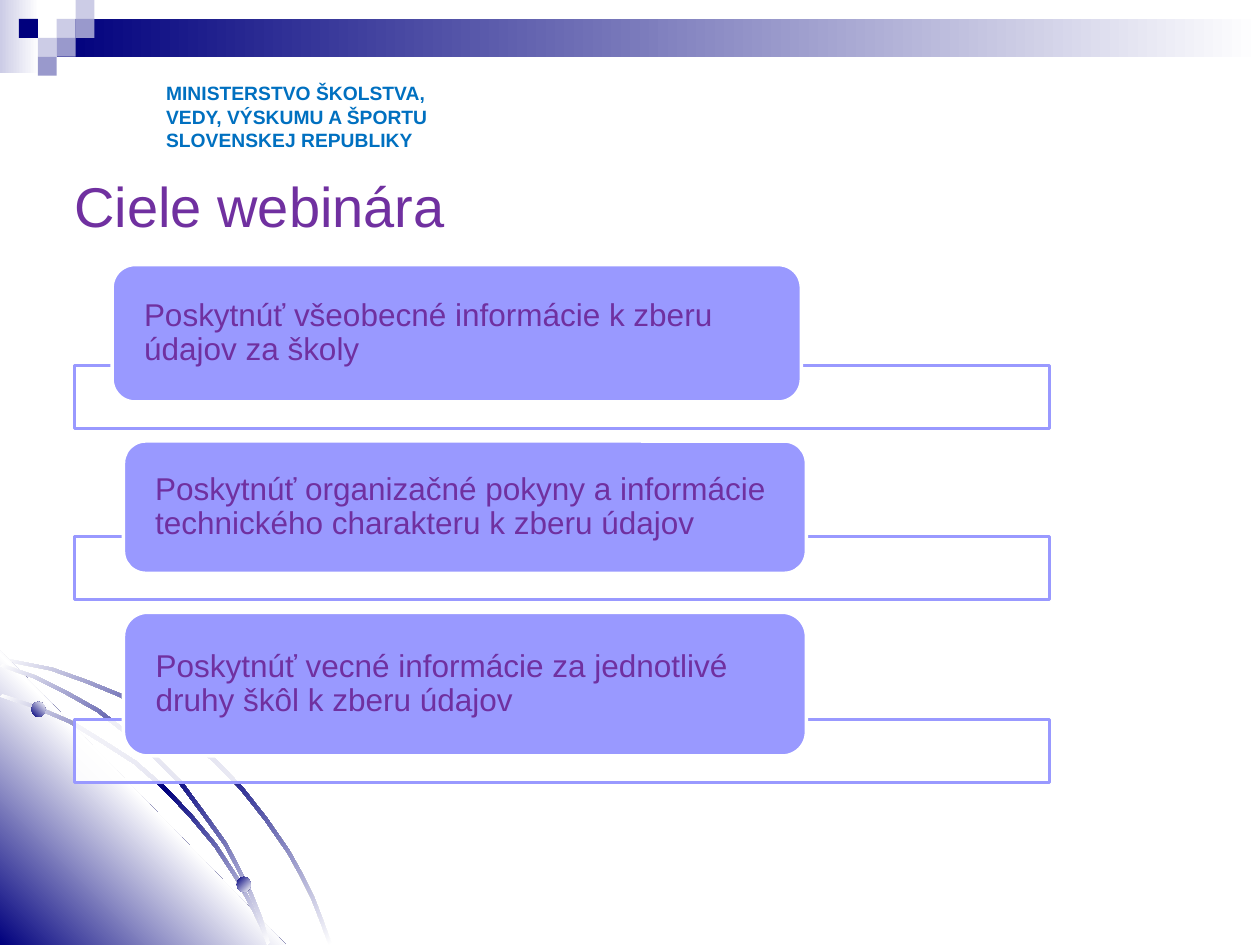
from lxml.etree import SubElement
from pptx import Presentation
from pptx.dml.color import RGBColor
from pptx.enum.shapes import MSO_SHAPE
from pptx.enum.text import MSO_ANCHOR, MSO_AUTO_SIZE, PP_ALIGN
from pptx.oxml.ns import qn
from pptx.util import Inches, Pt

COLORS = {
    "navy": "00007D",
    "slate": "9999CC",
    "pale": "CCCCE6",
    "white": "FFFFFF",
    "card": "9999FF",
    "purple": "7030A0",
    "blue": "0070C0",
}
FONT = "Arial"
UNIT = Inches(0.1)  # the slide is a grid of 100 columns and 75 rows
SQUARE = 1.5
SQUARES = [  # column, row, colour
    (3, 1, "pale"), (4, 0, "pale"), (4, 1, "slate"), (2, 2, "pale"),
    (1, 1, "navy"), (3, 2, "slate"), (2, 3, "slate"),
]
# Lower edges of the arcs, in hundredths of an inch
OUTER_ARC = [
    (0, 524), (20, 528), (40, 532), (68, 542), (95, 553), (122, 569), (147, 586),
    (170, 605), (191, 627), (210, 651), (228, 677), (238, 695), (247, 713),
    (254, 731), (261, 750),
]
LOWER_ARC = [
    (0, 553), (27, 562), (55, 574), (81, 590), (106, 606), (129, 626), (150, 648),
    (170, 672), (187, 698), (201, 724), (207, 737), (212, 750),
]
MIDDLE_ARC = [
    (0, 529), (26, 538), (52, 551), (77, 565), (100, 583), (122, 602), (143, 623),
    (160, 646), (178, 671), (188, 690), (198, 710), (206, 730), (212, 750),
]
CORNER = [(227, 750), (0, 750), (0, 516)]
ARC_THICKNESS = 2
MINISTRY = "MINISTERSTVO ŠKOLSTVA,\nVEDY, VÝSKUMU A ŠPORTU\nSLOVENSKEJ REPUBLIKY"
GOALS = [  # left, width and height of the card, text
    (8.9, 54.7, 10.9, "Poskytnúť všeobecné informácie k zberu údajov za školy"),
    (9.8, 54.2, 10.5, "Poskytnúť organizačné pokyny a informácie technického charakteru k zberu údajov"),
    (9.8, 54.2, 11.4, "Poskytnúť vecné informácie za jednotlivé druhy škôl k zberu údajov"),
]
BAR_LEFT, BAR_WIDTH, BAR_HEIGHT = 5.9, 77.4, 5
FIRST_CARD_TOP, BAR_OVERLAP, GOAL_GAP = 21, 2.9, 1


def rgb(name):
    return RGBColor.from_string(COLORS[name])


def grid(*cells):
    return [round(cell * UNIT) for cell in cells]


def fill_solid(shape, color):
    shape.fill.solid()
    shape.fill.fore_color.rgb = rgb(color)


def fill_gradient(shape, colors, angle):
    """Spread the colours evenly, with the angle in degrees clockwise."""
    shape.fill.gradient()
    gradient = shape.fill._fill._gradFill
    for child in list(gradient):
        gradient.remove(child)
    stops = SubElement(gradient, qn("a:gsLst"))
    for index, color in enumerate(colors):
        position = 100000 * index // (len(colors) - 1)
        stop = SubElement(stops, qn("a:gs"), pos=str(position))
        SubElement(stop, qn("a:srgbClr"), val=COLORS[color])
    SubElement(gradient, qn("a:lin"), ang=str(angle * 60000), scaled="0")


def add_plain_shape(slide, kind, left, top, width, height):
    shape = slide.shapes.add_shape(kind, *grid(left, top, width, height))
    shape.shadow.inherit = False
    shape.line.fill.background()
    return shape


def add_freeform(slide, points, colors, angle):
    builder = slide.shapes.build_freeform(*points[0], scale=Inches(0.01))
    builder.add_line_segments(points[1:], close=True)
    shape = builder.convert_to_shape()
    shape.shadow.inherit = False
    shape.line.fill.background()
    fill_gradient(shape, colors, angle)


def add_arc(slide, edge):
    upper_edge = [(x + ARC_THICKNESS, y - ARC_THICKNESS) for x, y in reversed(edge)]
    add_freeform(slide, edge + upper_edge, ["white", "navy", "white"], 45)


def add_header(slide):
    fade = add_plain_shape(slide, MSO_SHAPE.RECTANGLE, 0, 0, 3.1, 5.8)
    fill_gradient(fade, ["pale", "white"], 0)
    band = add_plain_shape(slide, MSO_SHAPE.RECTANGLE, 4.5, 1.5, 95.5, 3)
    fill_gradient(band, ["navy", "white"], 0)
    for column, row, color in SQUARES:
        square = add_plain_shape(
            slide, MSO_SHAPE.RECTANGLE, column * SQUARE, row * SQUARE, SQUARE, SQUARE)
        fill_solid(square, color)


def add_corner(slide):
    add_arc(slide, OUTER_ARC)
    add_freeform(slide, CORNER, ["navy", "white", "navy"], 315)
    add_arc(slide, LOWER_ARC)
    add_arc(slide, MIDDLE_ARC)
    for left, top, angle in [(2.5, 55.7, 315), (18.8, 69.6, 45)]:
        dot = add_plain_shape(slide, MSO_SHAPE.OVAL, left, top, 1.1, 1.2)
        fill_gradient(dot, ["navy", "white"], angle)


def write(text_frame, text, size, color, bold=False):
    text_frame.word_wrap = True
    text_frame.text = text
    for paragraph in text_frame.paragraphs:
        paragraph.alignment = PP_ALIGN.LEFT
        for run in paragraph.runs:
            run.font.name = FONT
            run.font.size = Pt(size)
            run.font.bold = bold
            run.font.color.rgb = rgb(color)


def add_title(slide, text):
    title = slide.shapes.title
    title.left, title.top, title.width, title.height = grid(4.9, 13.1, 90, 12.5)
    title.text_frame.auto_size = MSO_AUTO_SIZE.NONE
    title.text_frame.vertical_anchor = MSO_ANCHOR.TOP
    write(title.text_frame, text, 32, "purple")


def add_ministry(slide):
    box = slide.shapes.add_textbox(*grid(12.2, 6, 24.4, 6.6))
    write(box.text_frame, MINISTRY, 11, "blue", bold=True)


def outline(shape, color):
    shape.line.color.rgb = rgb(color)
    shape.line.width = Pt(2)


def add_bar(slide, top):
    bar = add_plain_shape(slide, MSO_SHAPE.RECTANGLE, BAR_LEFT, top, BAR_WIDTH, BAR_HEIGHT)
    fill_solid(bar, "white")
    color = bar.fill._xPr.find(qn("a:solidFill"))[0]
    SubElement(color, qn("a:alpha"), val="90000")
    outline(bar, "card")


def add_card(slide, left, top, width, height, text):
    card = add_plain_shape(slide, MSO_SHAPE.ROUNDED_RECTANGLE, left, top, width, height)
    fill_solid(card, "card")
    outline(card, "white")
    frame = card.text_frame
    frame.margin_left = frame.margin_right = Inches(0.2)
    frame.margin_top = frame.margin_bottom = 0
    frame.vertical_anchor = MSO_ANCHOR.MIDDLE
    write(frame, text, 18, "purple")
    frame.paragraphs[0].line_spacing = 0.9


def add_goals(slide):
    top = FIRST_CARD_TOP
    for left, width, height, text in GOALS:
        bar_top = top + height - BAR_OVERLAP
        add_bar(slide, bar_top)
        add_card(slide, left, top, width, height, text)
        top = bar_top + BAR_HEIGHT + GOAL_GAP


def main():
    presentation = Presentation()
    presentation.slide_width, presentation.slide_height = grid(100, 75)
    slide = presentation.slides.add_slide(presentation.slide_layouts[5])
    add_header(slide)
    add_corner(slide)
    add_ministry(slide)
    add_title(slide, "Ciele webinára")
    add_goals(slide)
    presentation.save("out.pptx")


if __name__ == "__main__":
    main()
